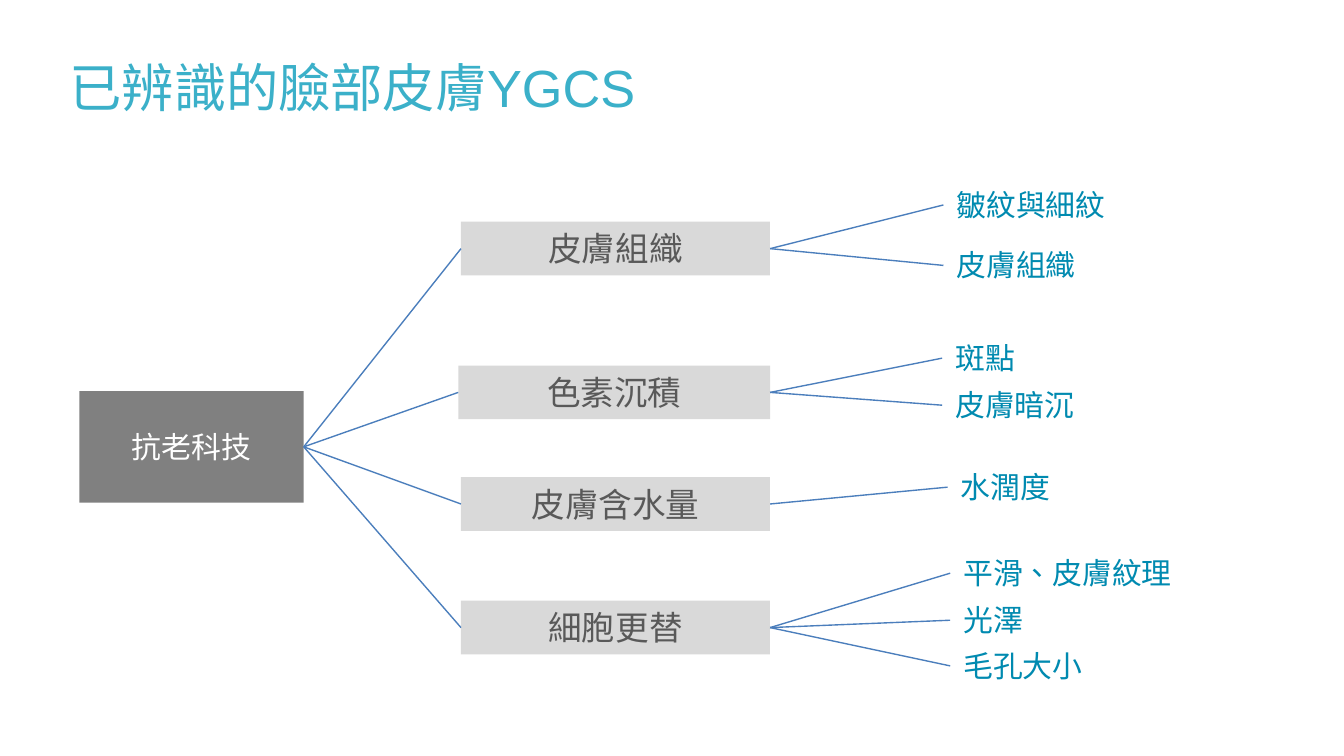
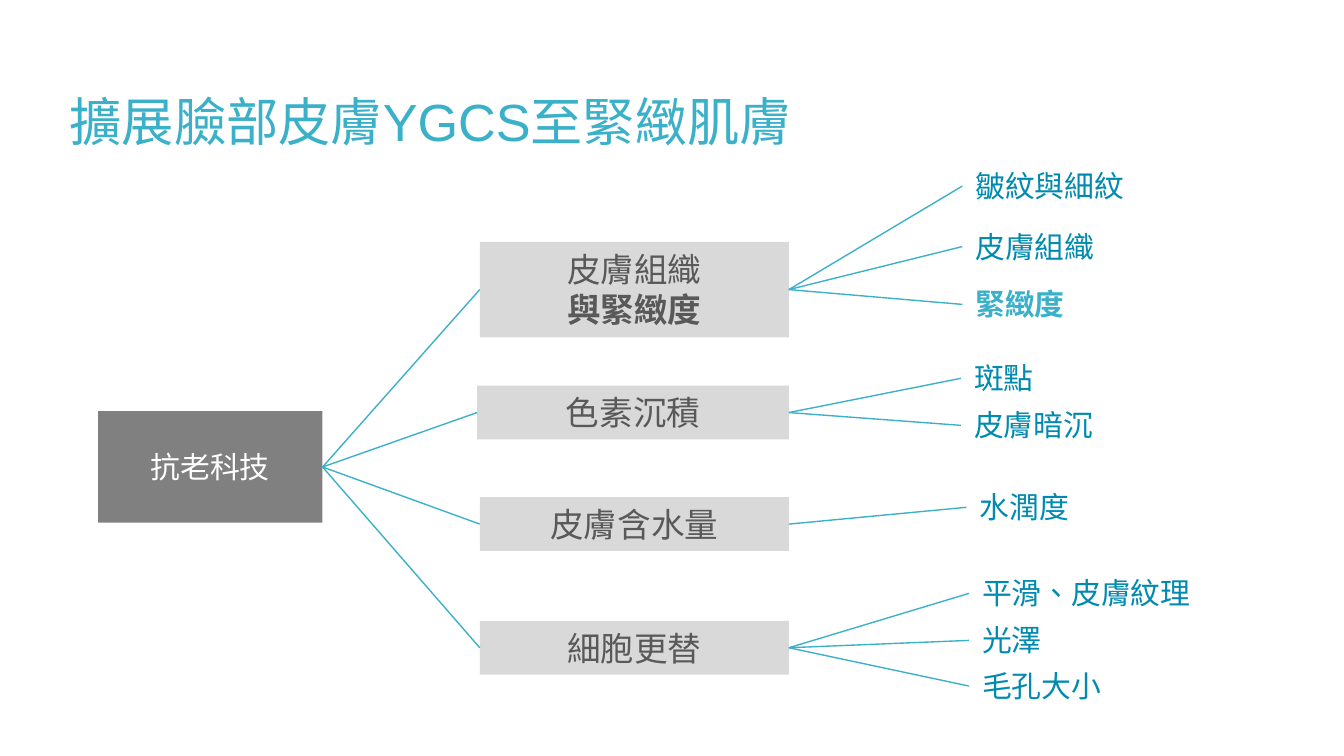
import pptx
import pptx.util
import pptx.dml.color
import pptx.enum.lang
import pptx.enum.shapes
import pptx.enum.text
import pptx.oxml.ns
from lxml import etree

WIDTH = 10
HEIGHT = WIDTH * 9 / 16
FONT = "Arial"
AQUA, TEAL, BLUE = "3BB0C9", "008AB0", "4B7EBC"
DARK, PALE, GREY, WHITE = "808080", "D9D9D9", "595959", "FFFFFF"

ROOT = "抗老科技"
ROOT_AT = (0.59, 2.91, 1.67, 0.83)
BOX_RIGHT, BOX_HEIGHT, TALL_BOX = 5.73, 0.4, 0.71
LABEL_WIDTH, LABEL_HEIGHT = 2.6, 0.37

TEXTURE = {"name": ["皮膚組織"], "left": 3.43, "top": 1.65, "height": BOX_HEIGHT,
           "label_left": 7.02, "labels": [("皺紋與細紋", 1.34), ("皮膚組織", 1.79)]}
FIRMNESS = {"name": ["皮膚組織", "與緊緻度"], "left": 3.43, "top": 1.65, "height": TALL_BOX,
            "label_left": 7.02,
            "labels": [("皺紋與細紋", 1.05), ("皮膚組織", 1.5), ("緊緻度", 1.93)]}
COMMON = [
    {"name": ["色素沉積"], "left": 3.41, "top": 2.72, "height": BOX_HEIGHT,
     "label_left": 7.01, "labels": [("斑點", 2.48), ("皮膚暗沉", 2.83)]},
    {"name": ["皮膚含水量"], "left": 3.43, "top": 3.55, "height": BOX_HEIGHT,
     "label_left": 7.05, "labels": [("水潤度", 3.44)]},
    {"name": ["細胞更替"], "left": 3.43, "top": 4.47, "height": BOX_HEIGHT,
     "label_left": 7.07, "labels": [("平滑、皮膚紋理", 4.08), ("光澤", 4.43), ("毛孔大小", 4.77)]},
]
NEW_WORDS = {"與緊緻度", "緊緻度"}

SLIDES = [
    {"title": "已辨識的臉部皮膚YGCS", "title_at": (0.42, 0.27, 9.92, 0.75),
     "groups": [TEXTURE] + COMMON, "shift": (0, 0), "line": BLUE},
    {"title": "擴展臉部皮膚YGCS至緊緻肌膚", "title_at": (0.42, 0.52, 9.02, 0.75),
     "groups": [FIRMNESS] + COMMON, "shift": (0.14, 0.15), "line": AQUA},
]


def rgb(color):
    return pptx.dml.color.RGBColor.from_string(color)


def inches(values):
    return [pptx.util.Inches(v) for v in values]


def write(sp, lines, size=16, color=TEAL, center=False, middle=False, grow=True):
    tf = sp.text_frame
    tf.word_wrap = True
    anchor = pptx.enum.text.MSO_ANCHOR
    tf.vertical_anchor = anchor.MIDDLE if middle else anchor.TOP
    if grow:
        tf.auto_size = pptx.enum.text.MSO_AUTO_SIZE.SHAPE_TO_FIT_TEXT
    p = tf.paragraphs[0]
    align = pptx.enum.text.PP_ALIGN
    p.alignment = align.CENTER if center else align.LEFT
    for i, line in enumerate(lines):
        if i:
            p.add_line_break()
        r = p.add_run()
        r.text = line
        r.font.name = FONT
        r.font.size = pptx.util.Pt(size)
        r.font.bold = line in NEW_WORDS
        r.font.color.rgb = rgb(color)
        r.font.language_id = pptx.enum.lang.MSO_LANGUAGE_ID.TRADITIONAL_CHINESE


def add_text(slide, at, lines, **style):
    sp = slide.shapes.add_textbox(*inches(at))
    write(sp, lines, **style)
    return sp


def add_box(slide, at, fill, lines, **style):
    sp = slide.shapes.add_shape(pptx.enum.shapes.MSO_SHAPE.RECTANGLE, *inches(at))
    sp.shadow.inherit = False
    sp.fill.solid()
    sp.fill.fore_color.rgb = rgb(fill)
    sp.line.fill.background()
    write(sp, lines, center=True, **style)
    return sp


def join(slide, start, end, color):
    line = slide.shapes.add_connector(pptx.enum.shapes.MSO_CONNECTOR.STRAIGHT, 0, 0, 0, 0)
    line.begin_connect(start, 3)
    line.end_connect(end, 1)
    line.line.color.rgb = rgb(color)
    line.line.width = pptx.util.Pt(0.75)
    etree.SubElement(line._element.spPr, pptx.oxml.ns.qn("a:effectLst"))


def build_tree(slide, groups, shift, color):
    dx, dy = shift

    def place(left, top, width, height):
        return left + dx, top + dy, width, height

    root = add_box(slide, place(*ROOT_AT), DARK, [ROOT],
                   color=WHITE, middle=True, grow=False)
    for group in groups:
        left = group["left"]
        at = place(left, group["top"], BOX_RIGHT - left, group["height"])
        box = add_box(slide, at, PALE, group["name"], size=18, color=GREY)
        join(slide, root, box, color)
        for text, top in group["labels"]:
            at = place(group["label_left"], top, LABEL_WIDTH, LABEL_HEIGHT)
            label = add_text(slide, at, [text], color=AQUA if text in NEW_WORDS else TEAL)
            join(slide, box, label, color)


def main():
    prs = pptx.Presentation()
    prs.slide_width, prs.slide_height = inches((WIDTH, HEIGHT))
    for data in SLIDES:
        slide = prs.slides.add_slide(prs.slide_layouts[6])
        add_text(slide, data["title_at"], [data["title"]],
                 size=28, color=AQUA, middle=True, grow=False)
        build_tree(slide, data["groups"], data["shift"], data["line"])
    prs.save("out.pptx")


if __name__ == "__main__":
    main()
